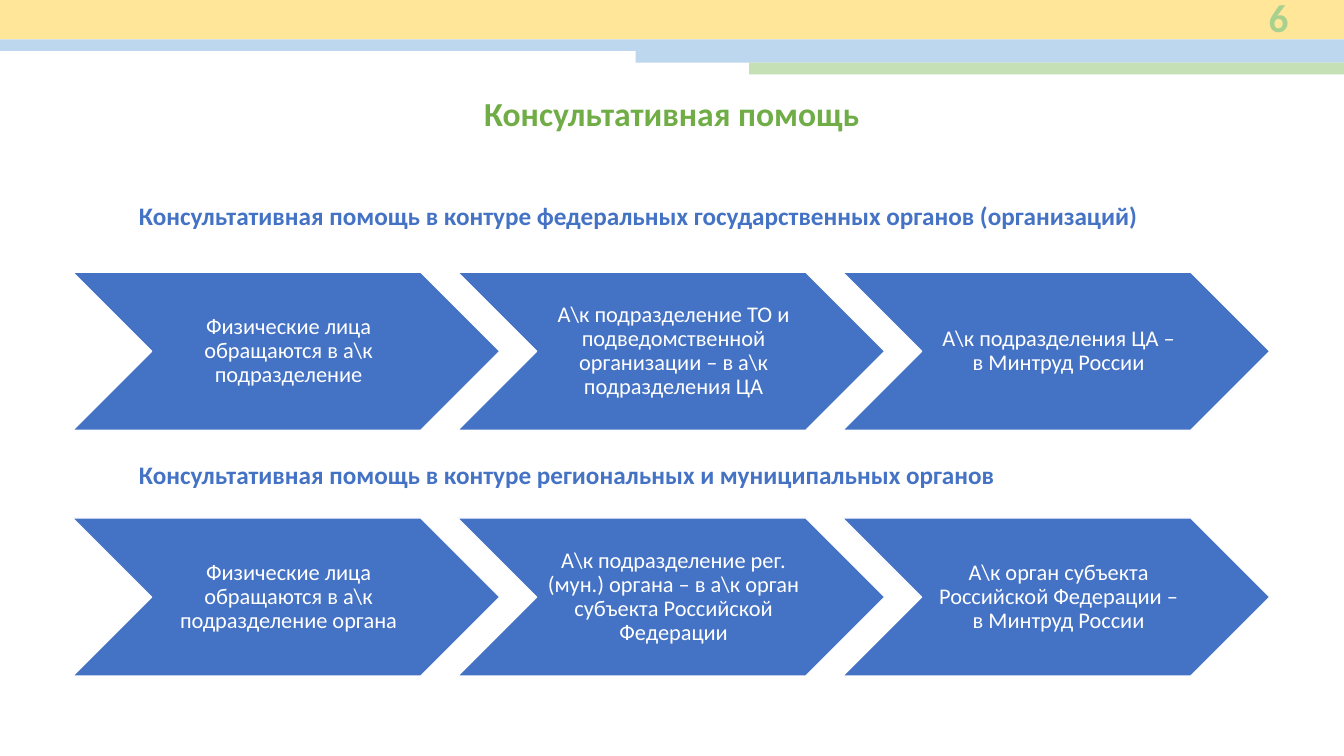
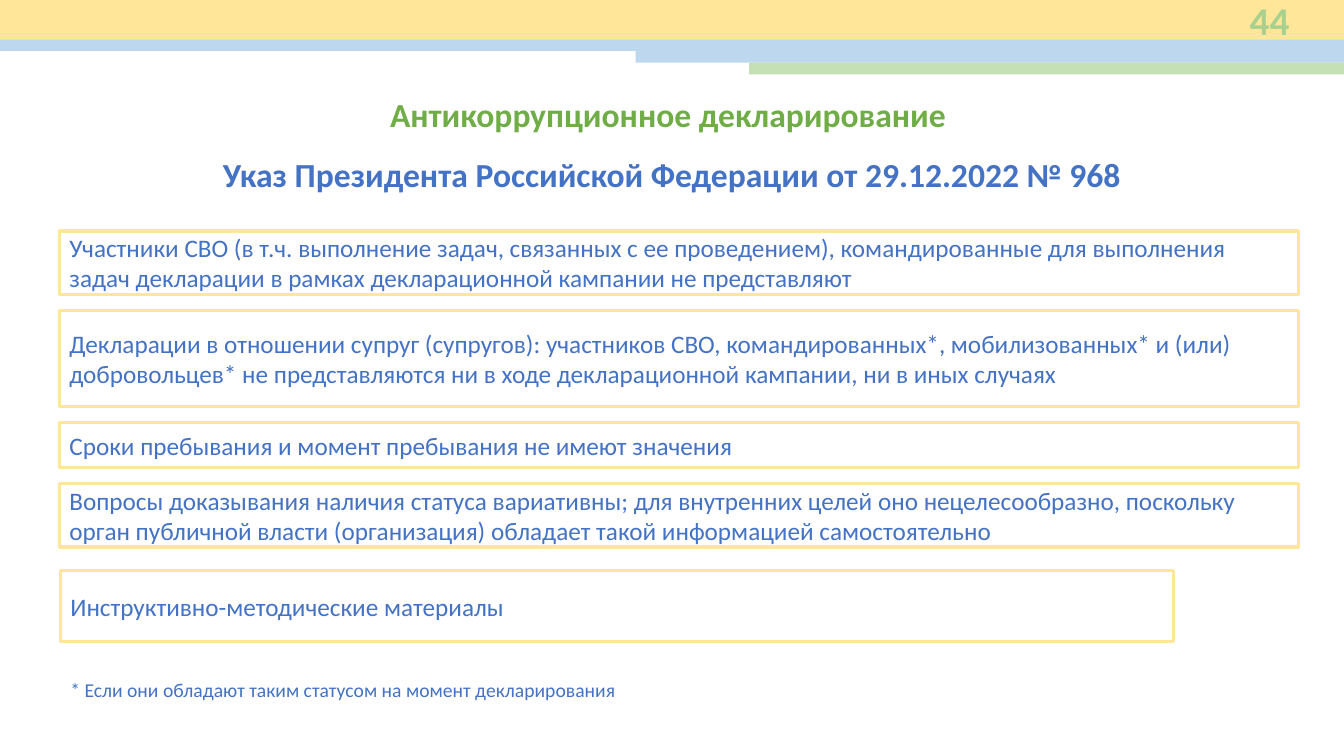
from pptx import Presentation
from pptx.dml.color import RGBColor
from pptx.enum.shapes import MSO_SHAPE
from pptx.enum.text import MSO_ANCHOR, PP_ALIGN
from pptx.util import Pt

RECTANGLE, CHEVRON = MSO_SHAPE.RECTANGLE, MSO_SHAPE.CHEVRON
TOP, MIDDLE = MSO_ANCHOR.TOP, MSO_ANCHOR.MIDDLE
LEFT, CENTER, RIGHT = PP_ALIGN.LEFT, PP_ALIGN.CENTER, PP_ALIGN.RIGHT
TITLE_ONLY = 5
WIDTH, HEIGHT = 960, 540

COLORS = {
    "yellow": "FFE699",
    "sky": "BDD7EE",
    "mint": "C5E0B4",
    "green": "70AD47",
    "pale_green": "A9D18E",
    "blue": "4472C4",
    "white": "FFFFFF",
}
BANDS = [
    (0, 0, 28.1, "yellow"),
    (0, 28.1, 8.4, "sky"),
    (454, 36.3, 8.4, "sky"),
    (535, 44.7, 8.4, "mint"),
]
TEXT_FORMATS = {
    "title": {"size": Pt(24), "bold": True, "color": "green", "align": CENTER, "anchor": TOP},
    "subtitle": {"size": Pt(24), "bold": True, "color": "blue", "align": CENTER, "anchor": TOP},
    "heading": {"size": Pt(18), "bold": True, "color": "blue"},
    "number": {"size": Pt(28), "bold": True, "color": "pale_green", "align": RIGHT},
    "step": {"size": Pt(16), "color": "white", "align": CENTER, "spacing": 0.9,
             "margins": (5, 1.5, 1.5, 1.5)},
    "item": {"size": Pt(18), "color": "blue"},
    "note": {"size": Pt(14), "color": "blue"},
}


def rgb(name):
    return RGBColor.from_string(COLORS[name])


class Deck:
    def __init__(self):
        self.presentation = Presentation()
        self.presentation.slide_width = Pt(WIDTH)
        self.presentation.slide_height = Pt(HEIGHT)
        self.slide = None

    def fill_text(self, shape, text, style):
        values = TEXT_FORMATS[style]
        frame = shape.text_frame
        frame.word_wrap = True
        frame.vertical_anchor = values.get("anchor", MIDDLE)
        sides = ("margin_left", "margin_top", "margin_right", "margin_bottom")
        for side, margin in zip(sides, values.get("margins", (7.2, 3.6, 7.2, 3.6))):
            setattr(frame, side, Pt(margin))
        paragraph = frame.paragraphs[0]
        paragraph.text = text
        paragraph.alignment = values.get("align", LEFT)
        paragraph.line_spacing = values.get("spacing", 1.0)
        font = paragraph.font
        settings = {"name": "Calibri", "size": values["size"], "bold": values.get("bold", False)}
        for attribute, value in settings.items():
            setattr(font, attribute, value)
        font.color.rgb = rgb(values["color"])

    def add_slide(self, title, title_top, number, number_box):
        layout = self.presentation.slide_layouts[TITLE_ONLY]
        self.slide = self.presentation.slides.add_slide(layout)
        for left, top, height, color in BANDS:
            self.shape(RECTANGLE, (left, top, WIDTH - left, height), fill=color)
        placeholder = self.slide.shapes.title
        position = {"left": 43.2, "top": title_top, "width": 873.4, "height": 36}
        for attribute, value in position.items():
            setattr(placeholder, attribute, Pt(value))
        self.fill_text(placeholder, title, "title")
        self.text(number_box, number, "number")

    def shape(self, kind, box, fill=None, line=None, line_width=1):
        shape = self.slide.shapes.add_shape(kind, *map(Pt, box))
        shape.shadow.inherit = False
        if fill:
            shape.fill.solid()
            shape.fill.fore_color.rgb = rgb(fill)
        else:
            shape.fill.background()
        if line:
            shape.line.color.rgb = rgb(line)
            shape.line.width = Pt(line_width)
        else:
            shape.line.fill.background()
        return shape

    def text(self, box, text, style):
        self.fill_text(self.slide.shapes.add_textbox(*map(Pt, box)), text, style)

    def process(self, top, steps):
        for index, step in enumerate(steps):
            box = (51.8 + index * 275, top, 305.3, 113)
            self.fill_text(self.shape(CHEVRON, box, "blue", "white"), step, "step")

    def framed_item(self, box, text):
        frame = self.shape(RECTANGLE, box, line="yellow", line_width=2.25)
        self.fill_text(frame, text, "item")

    def save(self):
        self.presentation.save("out.pptx")


def add_consulting_slide(deck):
    deck.add_slide("Консультативная помощь", 62.6, "6", (837.4, -3.6, 90, 31.7))
    circuits = [
        (132.5, "Консультативная помощь в контуре федеральных государственных органов (организаций)",
         194.4, [
             r"Физические лица обращаются в а\к подразделение",
             r"А\к подразделение ТО и подведомственной организации – в а\к подразделения ЦА",
             r"А\к подразделения ЦА –" "\nв Минтруд России",
         ]),
        (317.5, "Консультативная помощь в контуре региональных и муниципальных органов",
         370, [
             r"Физические лица обращаются в а\к подразделение органа",
             r"А\к подразделение рег. (мун.) органа – в а\к орган субъекта Российской Федерации",
             r"А\к орган субъекта Российской Федерации –" "\nв Минтруд России",
         ]),
    ]
    for heading_top, heading, steps_top, steps in circuits:
        deck.text((92.2, heading_top, 800, 43.2), heading, "heading")
        deck.process(steps_top, steps)


def add_declaration_slide(deck):
    deck.add_slide("Антикоррупционное декларирование ", 63.4, "44", (859, 0, 69.1, 28.1))
    deck.text((43.2, 106.6, 873.4, 36), "Указ Президента Российской Федерации от 29.12.2022 № 968",
              "subtitle")
    items = [
        (45.4, "Участники СВО (в т.ч. выполнение задач, связанных с ее проведением), "
               "командированные для выполнения задач декларации в рамках декларационной "
               "кампании не представляют"),
        (68.4, "Декларации в отношении супруг (супругов): участников СВО, командированных*, "
               "мобилизованных* и (или) добровольцев* не представляются ни в ходе "
               "декларационной кампании, ни в иных случаях"),
        (32.4, "Сроки пребывания и момент пребывания не имеют значения"),
        (45.4, "Вопросы доказывания наличия статуса вариативны; для внутренних целей оно "
               "нецелесообразно, поскольку орган публичной власти (организация) обладает "
               "такой информацией самостоятельно"),
    ]
    top, gap = 165, 11.4
    for height, text in items:
        deck.framed_item((42.5, top, 885, height), text)
        top += height + gap
    deck.framed_item((43.2, 407.5, 795, 51), "Инструктивно-методические материалы")
    deck.text((43.2, 478, 885, 28.8),
              "* Если они обладают таким статусом на момент декларирования", "note")


def main():
    deck = Deck()
    add_consulting_slide(deck)
    add_declaration_slide(deck)
    deck.save()


if __name__ == "__main__":
    main()
